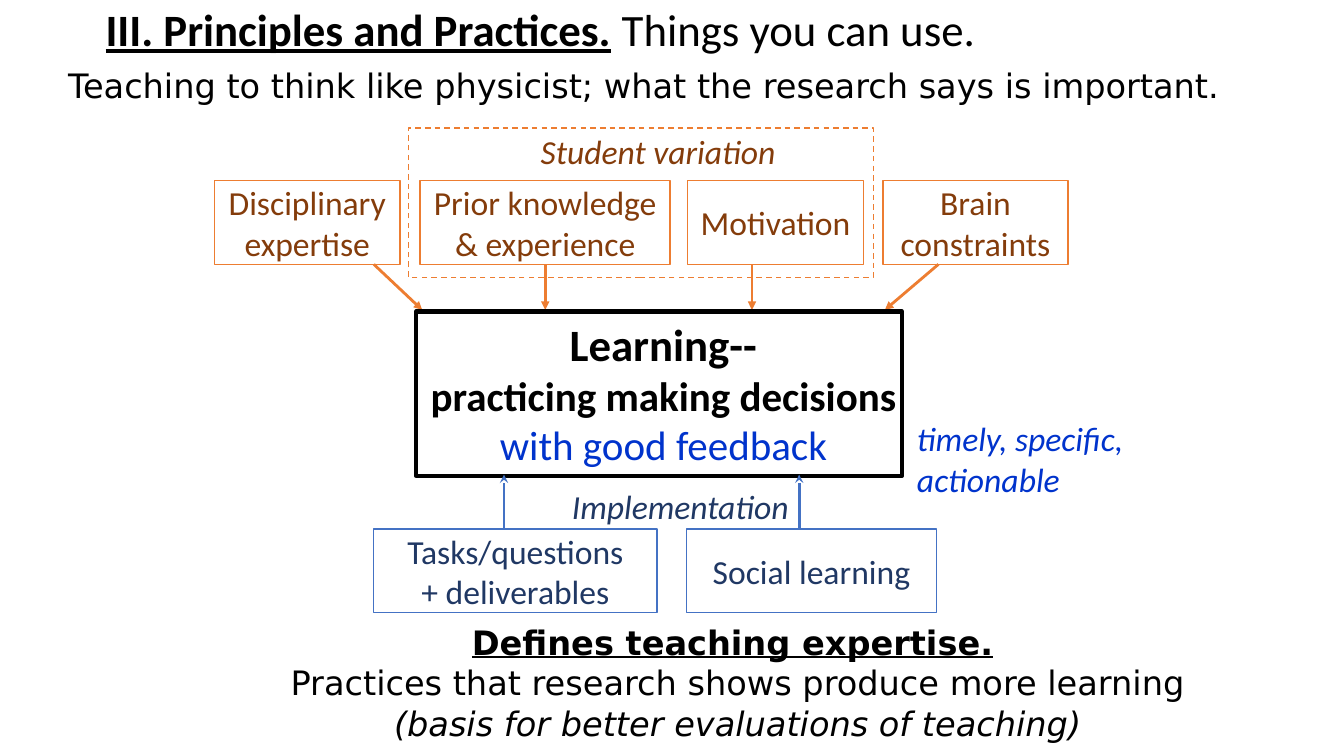
from lxml import etree
from pptx import Presentation
from pptx.dml.color import RGBColor
from pptx.enum import dml, shapes, text
from pptx.oxml.ns import qn
from pptx.util import Cm, Pt

BLACK = RGBColor(0x00, 0x00, 0x00)
WHITE = RGBColor(0xFF, 0xFF, 0xFF)
ORANGE = RGBColor(0xED, 0x7D, 0x31)
BROWN = RGBColor(0x84, 0x3C, 0x0B)
BLUE = RGBColor(0x44, 0x72, 0xC4)
NAVY = RGBColor(0x20, 0x38, 0x64)
FEEDBACK_BLUE = RGBColor(0x00, 0x33, 0xCC)

CENTER = text.PP_ALIGN.CENTER
LEFT = text.PP_ALIGN.LEFT
TOP = text.MSO_ANCHOR.TOP
MIDDLE = text.MSO_ANCHOR.MIDDLE
BOX_INSETS = (0.18, 0.13, 0.18, 0.13)
TEXT_INSETS = (0.25, 0.13, 0.25, 0.13)
BOX_HEIGHT = 2.11


def style_font(font, name="Calibri", size=24, color=BLACK, **marks):
    font.name = name
    font.size = Pt(size)
    font.color.rgb = color
    for mark, value in marks.items():
        setattr(font, mark, value)


def write_text(sp, paragraphs, align=LEFT, anchor=TOP, insets=TEXT_INSETS, **base):
    tf = sp.text_frame
    tf.word_wrap = True
    tf.auto_size = text.MSO_AUTO_SIZE.NONE
    tf.vertical_anchor = anchor
    tf.margin_left, tf.margin_top, tf.margin_right, tf.margin_bottom = map(Cm, insets)
    for i, runs in enumerate(paragraphs):
        p = tf.paragraphs[0] if i == 0 else tf.add_paragraph()
        p.alignment = align
        style_font(p.font, **base)
        for content, marks in runs:
            r = p.add_run()
            r.text = content
            style_font(r.font, **{**base, **marks})


def plain(*lines):
    return [[(line, {})] for line in lines]


def add_text(slide, box, paragraphs, **options):
    sp = slide.shapes.add_textbox(*map(Cm, box))
    write_text(sp, paragraphs, **options)


def add_box(slide, box, color, width=1, fill=None):
    sp = slide.shapes.add_shape(shapes.MSO_SHAPE.RECTANGLE, *map(Cm, box))
    sp.shadow.inherit = False
    if fill is None:
        sp.fill.background()
    else:
        sp.fill.solid()
        sp.fill.fore_color.rgb = fill
    sp.line.color.rgb = color
    sp.line.width = Pt(width)
    return sp


def add_labelled_box(slide, box, lines, line_color, text_color):
    sp = add_box(slide, box, line_color)
    write_text(sp, plain(*lines), align=CENTER, anchor=MIDDLE,
               insets=BOX_INSETS, color=text_color)


def add_arrow(slide, start, end, color, head):
    cx = slide.shapes.add_connector(
        shapes.MSO_CONNECTOR.STRAIGHT, *map(Cm, (*start, *end)))
    cx.line.color.rgb = color
    cx.line.width = Pt(2)
    etree.SubElement(cx.line._get_or_add_ln(), qn("a:tailEnd"), type=head)
    etree.SubElement(cx._element.spPr, qn("a:effectLst"))


def add_header(slide, box):
    left, top, width, height = box
    title = slide.shapes.title
    title.left, title.top, title.width, title.height = map(
        Cm, (left + 0.94, top, width - 1.78, 1.63))
    write_text(title, [[
        ("III. Principles and Practices.", {"bold": True, "underline": True}),
        (" ", {"bold": True}),
        ("Things you can use.", {}),
    ]], size=32)
    add_text(slide, (left, top + 1.58, width, height - 1.58), plain(
        "Teaching to think like physicist; what the research says is important."),
        name="DejaVu Sans")


def add_influences(slide, box):
    left, top, width, height = box
    box_top = top + 1.32
    arrow_top = box_top + BOX_HEIGHT
    influences = [
        (0, 4.67, ("Disciplinary", "expertise"), 4.01, 5.23),
        (5.18, 6.3, ("Prior knowledge", "& experience"), 8.33, 8.33),
        (11.91, 4.45, ("Motivation",), 13.54, 13.54),
        (16.84, width - 16.84, ("Brain", "constraints"), 18.24, 16.89),
    ]
    for x, w, lines, start, end in influences:
        add_labelled_box(slide, (left + x, box_top, w, BOX_HEIGHT),
                         lines, ORANGE, BROWN)
        add_arrow(slide, (left + start, arrow_top),
                  (left + end, top + height), ORANGE, "triangle")
    group = add_box(slide, (left + 4.88, top, 11.73, 3.76), ORANGE)
    group.line.dash_style = dml.MSO_LINE.DASH
    add_text(slide, (left + 8, top - 0.05, 6.35, 1.27), plain("Student variation"),
             align=CENTER, insets=BOX_INSETS, color=BROWN, italic=True)


def add_learning(slide, box):
    left, top, width, height = box
    sp = add_box(slide, box, BLACK, width=3, fill=WHITE)
    write_text(sp, [
        [("Learning--", {"size": 32, "bold": True})],
        [("practicing making decisions ", {"bold": True}),
         ("with good feedback", {"color": FEEDBACK_BLUE})],
    ], align=CENTER, insets=(0.3, 0.13, 0.08, 0.13), size=29.3)
    add_text(slide, (left + width + 0.13, top + 2.56, 6.86, 2.31),
             plain("timely, specific, actionable"),
             color=FEEDBACK_BLUE, italic=True)


def add_implementation(slide, box):
    left, top, width, height = box
    box_top = top + height - BOX_HEIGHT
    practices = [
        (0, 7.14, ("Tasks/questions", "+ deliverables"), 3.28),
        (7.88, width - 7.88, ("Social learning",), 10.72),
    ]
    for x, w, lines, arrow_x in practices:
        add_labelled_box(slide, (left + x, box_top, w, BOX_HEIGHT),
                         lines, BLUE, NAVY)
        add_arrow(slide, (left + arrow_x, box_top),
                  (left + arrow_x, top), BLUE, "stealth")
    add_text(slide, (left + 3.99, top + 0.16, 7.47, 1.27), plain("Implementation"),
             align=CENTER, insets=BOX_INSETS, color=NAVY, italic=True)


def add_conclusion(slide, box):
    add_text(slide, box, [
        [("Defines teaching expertise.", {"bold": True, "underline": True}),
         (" ", {})],
        [("Practices that research shows produce more learning", {})],
        [("(basis for better evaluations of teaching)", {"italic": True})],
    ], align=CENTER, name="DejaVu Sans")


def main():
    prs = Presentation()
    prs.slide_width, prs.slide_height = Cm(33.87), Cm(19.05)
    slide = prs.slides.add_slide(prs.slide_layouts.get_by_name("Title Only"))
    add_header(slide, (1.47, -0.08, 31.32, 2.85))
    add_influences(slide, (5.41, 3.23, 21.51, 4.58))
    add_learning(slide, (10.49, 7.85, 12.24, 4.14))
    add_implementation(slide, (9.42, 11.96, 14.18, 3.48))
    add_conclusion(slide, (4.98, 15.54, 27.23, 3.33))
    prs.save("out.pptx")


if __name__ == "__main__":
    main()
